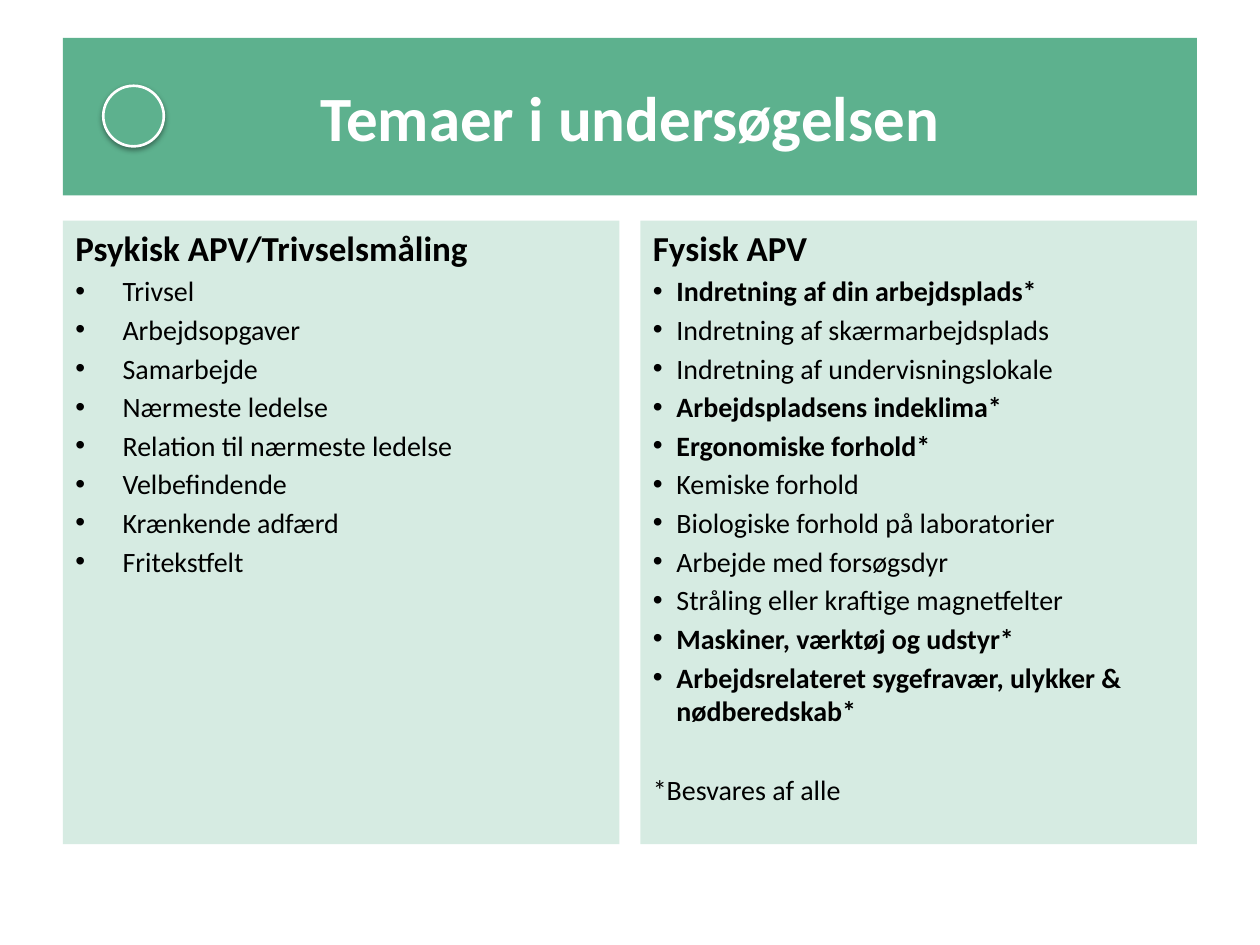
from dataclasses import dataclass

from lxml.etree import SubElement as Sub
from pptx import Presentation as Deck
from pptx.dml.color import RGBColor as RGB
from pptx.enum.shapes import MSO_SHAPE as Kind
from pptx.enum.text import MSO_ANCHOR as Anchor, PP_ALIGN as Align
from pptx.oxml.ns import qn
from pptx.util import Pt

GREEN = RGB(0x5D, 0xB1, 0x8E)
WHITE = RGB(255, 255, 255)
BLACK = RGB(0, 0, 0)
FONT = "Calibri"
LEFT, WIDE, GAP = 36, 648, 12
HALF = (WIDE - GAP) / 2


@dataclass
class Panel:
    left: float
    head: str
    items: list[str]
    indent: float
    note: str = ""


PANELS = [
    Panel(LEFT, "Psykisk APV/Trivselsmåling", [
        "Trivsel",
        "Arbejdsopgaver",
        "Samarbejde",
        "Nærmeste ledelse",
        "Relation til nærmeste ledelse",
        "Velbefindende",
        "Krænkende adfærd",
        "Fritekstfelt",
    ], 27),
    Panel(LEFT + HALF + GAP, "Fysisk APV", [
        "Indretning af din arbejdsplads*",
        "Indretning af skærmarbejdsplads",
        "Indretning af undervisningslokale",
        "Arbejdspladsens indeklima*",
        "Ergonomiske forhold*",
        "Kemiske forhold",
        "Biologiske forhold på laboratorier",
        "Arbejde med forsøgsdyr",
        "Stråling eller kraftige magnetfelter",
        "Maskiner, værktøj og udstyr*",
        "Arbejdsrelateret sygefravær, ulykker & nødberedskab*",
    ], 13.5, "*Besvares af alle"),
]


def add_box(slide, kind: Kind, left: float, top: float, wide: float, high: float):
    box = slide.shapes.add_shape(kind, Pt(left), Pt(top), Pt(wide), Pt(high))
    box.shadow.inherit = False
    box.fill.solid()
    box.fill.fore_color.rgb = GREEN
    box.line.fill.background()
    return box


def write(para, text: str, size: float, bold: bool, color: RGB = BLACK,
          align: Align = Align.LEFT, before: float = 0) -> None:
    para.text = text
    para.alignment = align
    para.space_before = Pt(before)
    font = para.font
    font.name, font.size, font.bold = FONT, Pt(size), bold
    font.color.rgb = color


def add_bullet(para, indent: float) -> None:
    props = para._p.get_or_add_pPr()
    props.set("marL", str(Pt(indent)))
    props.set("indent", str(-Pt(indent)))
    Sub(props, qn("a:buFont"), typeface="Arial")
    Sub(props, qn("a:buChar"), char="•")


def add_panel(slide, panel: Panel) -> None:
    box = add_box(slide, Kind.RECTANGLE, panel.left, 126, HALF, 356.4)
    tint = box._element.spPr.find(qn("a:solidFill"))[0]
    Sub(tint, qn("a:alpha"), val="25000")
    frame = box.text_frame
    frame.word_wrap = True
    frame.vertical_anchor = Anchor.TOP
    write(frame.paragraphs[0], panel.head, 20, True)
    for item in panel.items:
        para = frame.add_paragraph()
        add_bullet(para, panel.indent)
        write(para, item, 16, item.endswith("*"), before=2.9)
    if panel.note:
        write(frame.add_paragraph(), panel.note, 16, False, before=25.5)


def add_title(slide, text: str) -> None:
    box = add_box(slide, Kind.RECTANGLE, LEFT, 21.6, WIDE, 90)
    box.text_frame.word_wrap = True
    box.text_frame.vertical_anchor = Anchor.MIDDLE
    write(box.text_frame.paragraphs[0], text, 36, True, WHITE, Align.CENTER)


def add_ring(slide) -> None:
    ring = add_box(slide, Kind.OVAL, 59, 49, 34.6, 34.6)
    ring.line.color.rgb = WHITE
    ring.line.width = Pt(1.5)
    glow = Sub(ring._element.spPr.find(qn("a:effectLst")), qn("a:outerShdw"),
               blurRad=str(Pt(3.1)), dist=str(Pt(1.6)), dir="5400000", rotWithShape="0")
    tint = Sub(glow, qn("a:srgbClr"), val=str(BLACK))
    Sub(tint, qn("a:alpha"), val="38000")


def main() -> None:
    deck = Deck()
    deck.slide_width, deck.slide_height = Pt(720), Pt(540)
    slide = deck.slides.add_slide(deck.slide_layouts[6])
    add_title(slide, "Temaer i undersøgelsen")
    for panel in PANELS:
        add_panel(slide, panel)
    add_ring(slide)
    deck.save("out.pptx")


if __name__ == "__main__":
    main()
